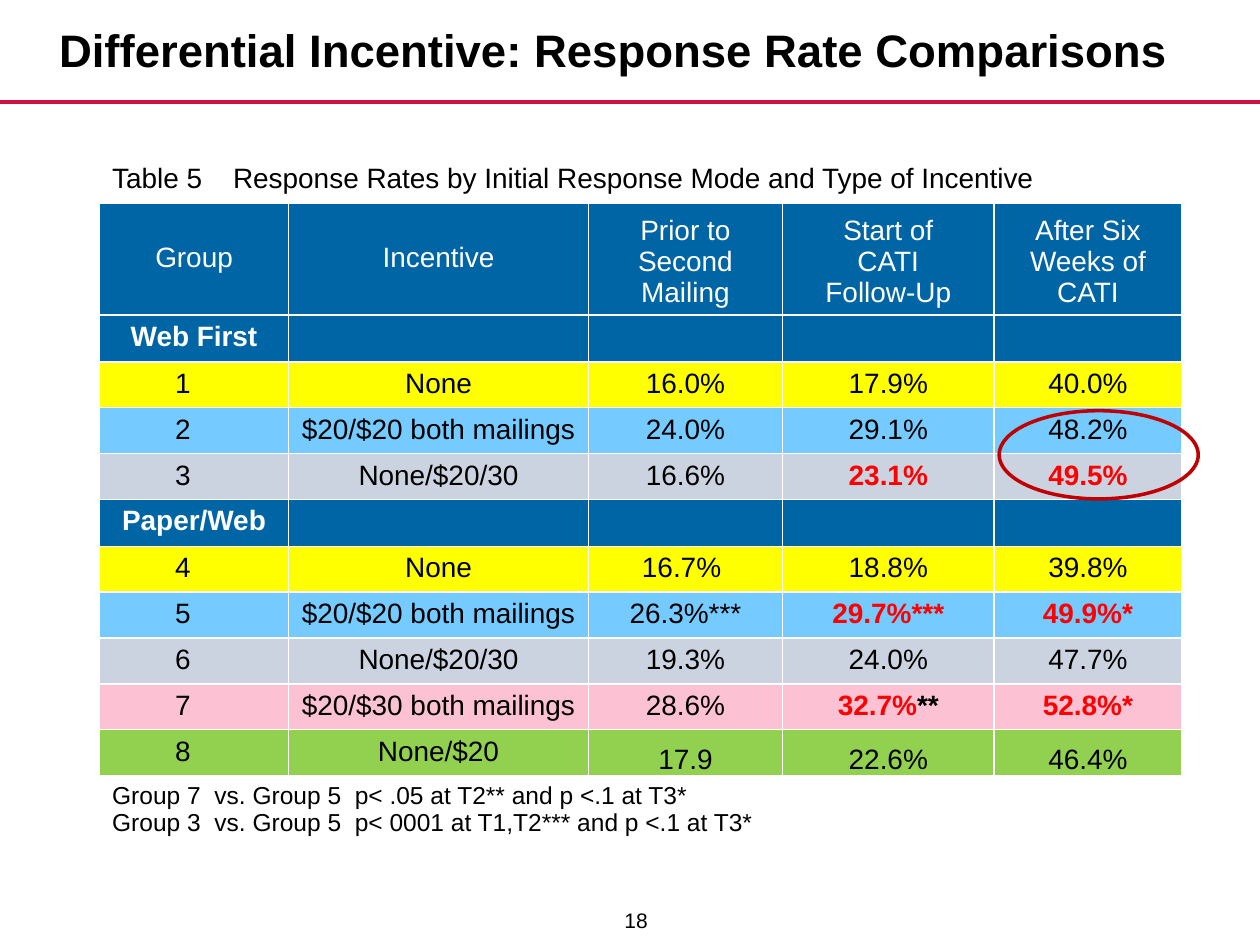
"""Build the slide that compares response rates across incentive groups."""
from dataclasses import dataclass, field

import lxml.etree
import pptx
import pptx.dml.color
import pptx.enum.shapes
import pptx.enum.text
import pptx.oxml.ns
import pptx.util

ANCHOR = pptx.enum.text.MSO_ANCHOR
ALIGN = pptx.enum.text.PP_ALIGN
COLORS = {
    "black": "000000", "white": "FFFFFF", "red": "FF0000", "crimson": "CE1141",
    "ring": "C00000", "navy": "0065A4", "yellow": "FFFF00", "sky": "75CAFF",
    "silver": "CCD3E0", "pink": "FCC1D2", "green": "92D050",
}
CELL_UNIT = pptx.util.Inches(0.1)
COLUMN_SPANS = (15, 23.8, 15.4, 16.8, 14.9)
CAPTION_SPAN, HEADER_SPAN, BODY_SPAN, NOTES_SPAN = 3.6, 9, 3.64, 10.9
TIGHT_INSETS = {"margin_left": 0.1, "margin_right": 0.1, "margin_top": 0.1, "margin_bottom": 0}


@dataclass(frozen=True)
class Phrase:
    """A stretch of text in one look."""
    text: str
    color: str = "black"
    bold: bool = False
    size: float = 16


@dataclass(frozen=True)
class Entry:
    """The phrases of one table cell and how they are placed."""
    phrases: tuple[Phrase, ...] = ()
    align: ALIGN = ALIGN.CENTER
    anchor: ANCHOR = ANCHOR.TOP
    level: int = 0
    insets: dict[str, float] = field(default_factory=dict)


@dataclass(frozen=True)
class Band:
    """One table row."""
    entries: tuple[Entry, ...]
    fill: str | None
    span: float = BODY_SPAN


@dataclass(frozen=True)
class Label:
    """A free-standing line of text on the grid."""
    phrase: Phrase
    place: tuple[float, float, float, float]
    align: ALIGN


def units(count: float) -> int:
    """Turn grid columns or rows into a length."""
    return round(count * CELL_UNIT)


def rgb(name: str) -> pptx.dml.color.RGBColor:
    """Look up a named colour."""
    return pptx.dml.color.RGBColor.from_string(COLORS[name])


def assign(target: object, values: dict) -> None:
    """Set attributes from a dict."""
    for name, value in values.items():
        setattr(target, name, value)


def write(paragraph, phrase: Phrase) -> None:
    """Add a phrase, with a line break at each vertical tab."""
    for index, piece in enumerate(phrase.text.split("\v")):
        if index:
            paragraph.add_line_break()
        run = paragraph.add_run()
        run.text = piece
        assign(run.font, {"name": "Arial", "size": pptx.util.Pt(phrase.size), "bold": phrase.bold})
        run.font.color.rgb = rgb(phrase.color)


def edge(cell, side: str, points: float) -> None:
    """Give one side of a cell a white border."""
    line = lxml.etree.SubElement(cell._tc.get_or_add_tcPr(), pptx.oxml.ns.qn(f"a:ln{side}"),
                                 w=str(pptx.util.Pt(points)))
    solid = lxml.etree.SubElement(line, pptx.oxml.ns.qn("a:solidFill"))
    lxml.etree.SubElement(solid, pptx.oxml.ns.qn("a:srgbClr"), val=COLORS["white"])


def fill_cell(cell, entry: Entry, fill: str | None, edges: dict[str, float]) -> None:
    """Fill, frame and write one table cell."""
    for side, points in edges.items():
        edge(cell, side, points)
    if fill:
        cell.fill.solid()
        cell.fill.fore_color.rgb = rgb(fill)
    else:
        cell.fill.background()
    cell.vertical_anchor = entry.anchor
    assign(cell, {name: units(inset) for name, inset in entry.insets.items()})
    paragraph = cell.text_frame.paragraphs[0]
    for phrase in entry.phrases:
        for index, line in enumerate(phrase.text.split("\n")):
            if index:
                paragraph = cell.text_frame.add_paragraph()
            assign(paragraph, {"alignment": entry.align, "level": entry.level})
            if entry.level:
                indent = {"marL": str(units(5 * entry.level)), "indent": "0"}
                for name, value in indent.items():
                    paragraph._p.get_or_add_pPr().set(name, value)
            write(paragraph, Phrase(line, phrase.color, phrase.bold, phrase.size))
    if not entry.phrases:
        lxml.etree.SubElement(paragraph._p, pptx.oxml.ns.qn("a:endParaRPr"), sz="1600")


def wide_band(text: str, size: float, anchor: ANCHOR, span: float) -> Band:
    """Describe a row whose first cell covers all columns."""
    first = Entry((Phrase(text, size=size),), ALIGN.LEFT, anchor)
    return Band((first,) + (Entry(),) * 4, None, span)


def mode_band(mode: str) -> Band:
    """Describe the row that opens a response mode."""
    return Band((Entry((Phrase(mode, "white", True),)),) + (Entry(),) * 4, "navy")


def group_band(group: str, incentive: str, fill: str, *rates: str | tuple[Phrase, ...],
               rate_look: dict | None = None) -> Band:
    """Describe the row of one group."""
    cells = [Entry((Phrase(rate),) if isinstance(rate, str) else rate, **(rate_look or {}))
             for rate in rates]
    return Band((Entry((Phrase(group),), ALIGN.LEFT, level=1), Entry((Phrase(incentive),)), *cells), fill)


def strong(text: str) -> tuple[Phrase, ...]:
    """Mark a rate as notable."""
    return (Phrase(text, "red", True),)


HEADINGS = ("Group", "Incentive", "Prior to\nSecond\nMailing", "Start of\nCATI\nFollow-Up",
            "After Six\vWeeks of\vCATI")
BANDS = (
    wide_band("Table 5    Response Rates by Initial Response Mode and Type of Incentive",
              16, ANCHOR.MIDDLE, CAPTION_SPAN),
    Band(tuple(Entry((Phrase(heading, "white"),), anchor=ANCHOR.MIDDLE if index < 2 else ANCHOR.BOTTOM)
               for index, heading in enumerate(HEADINGS)), "navy", HEADER_SPAN),
    mode_band("Web First"),
    group_band("1", "None", "yellow", "16.0%", "17.9%", "40.0%"),
    group_band("2", "$20/$20 both mailings", "sky", "24.0%", "29.1%", "48.2%"),
    group_band("3", "None/$20/30", "silver", "16.6%", strong("23.1%"), strong("49.5%")),
    mode_band("Paper/Web"),
    group_band("4", "None", "yellow", "16.7% ", "18.8%", "39.8%"),
    group_band("5", "$20/$20 both mailings", "sky", "26.3%***", strong("29.7%***"), strong("49.9%*")),
    group_band("6", "None/$20/30", "silver", "19.3%", "24.0%", "47.7%"),
    group_band("7", "$20/$30 both mailings", "pink", "28.6%",
               strong("32.7%") + (Phrase("**", bold=True),), strong("52.8%*")),
    group_band("8", "None/$20", "green", "17.9", "22.6%", "46.4%",
               rate_look={"anchor": ANCHOR.BOTTOM, "insets": TIGHT_INSETS}),
    wide_band("Group 7  vs. Group 5  p< .05 at T2** and p <.1 at T3*\n"
              "Group 3  vs. Group 5  p< 0001 at T1,T2*** and p <.1 at T3*",
              14, ANCHOR.TOP, NOTES_SPAN),
)
LABELS = (
    Label(Phrase("Differential Incentive: Response Rate Comparisons", bold=True, size=26),
          (0, 0.3, 97.4, 7.3), ALIGN.CENTER),
    Label(Phrase("18", size=12), (47.6, 71, 4.8, 4), ALIGN.RIGHT),
)


def draw_rule(slide) -> None:
    """Draw the line under the title."""
    rule = slide.shapes.add_connector(pptx.enum.shapes.MSO_CONNECTOR.STRAIGHT,
                                      0, units(8.1), units(100), units(8.1))
    rule.line.color.rgb = rgb("crimson")
    rule.line.width = pptx.util.Pt(2)
    lxml.etree.SubElement(rule._element.spPr, pptx.oxml.ns.qn("a:effectLst"))


def draw_rates(slide, bands: tuple[Band, ...]) -> None:
    """Draw the table of response rates."""
    rates = slide.shapes.add_table(len(bands), len(COLUMN_SPANS), units(7.9), units(12.4),
                                   units(sum(COLUMN_SPANS)), units(sum(band.span for band in bands))).table
    assign(rates, {"first_row": False, "horz_banding": False})
    for column, span in zip(rates.columns, COLUMN_SPANS):
        column.width = units(span)
    for index, band in enumerate(bands):
        rates.rows[index].height = units(band.span)
        edges = {"L": 1, "R": 1, "T": 3 if index == 1 else 1, "B": 1 if index else 3}
        for column, entry in enumerate(band.entries):
            fill_cell(rates.cell(index, column), entry, band.fill, edges)
        if band.fill is None:
            rates.cell(index, 0).merge(rates.cell(index, len(COLUMN_SPANS) - 1))


def draw_label(slide, label: Label) -> None:
    """Draw a line of text."""
    frame = slide.shapes.add_textbox(*map(units, label.place)).text_frame
    assign(frame, {"word_wrap": True, "vertical_anchor": ANCHOR.MIDDLE})
    frame.paragraphs[0].alignment = label.align
    write(frame.paragraphs[0], label.phrase)


def draw_ring(slide) -> None:
    """Circle the final rates of groups 2 and 3."""
    ring = slide.shapes.add_shape(pptx.enum.shapes.MSO_SHAPE.OVAL, *map(units, (79.3, 32.6, 15.8, 7)))
    ring.shadow.inherit = False
    ring.fill.background()
    ring.line.color.rgb = rgb("ring")
    ring.line.width = pptx.util.Pt(2)


def main() -> None:
    """Build and save the slide."""
    deck = pptx.Presentation()
    assign(deck, {"slide_width": units(100), "slide_height": units(75)})
    slide = deck.slides.add_slide(deck.slide_layouts[6])
    draw_rule(slide)
    draw_rates(slide, BANDS)
    for label in LABELS:
        draw_label(slide, label)
    draw_ring(slide)
    deck.save("out.pptx")


if __name__ == "__main__":
    main()
